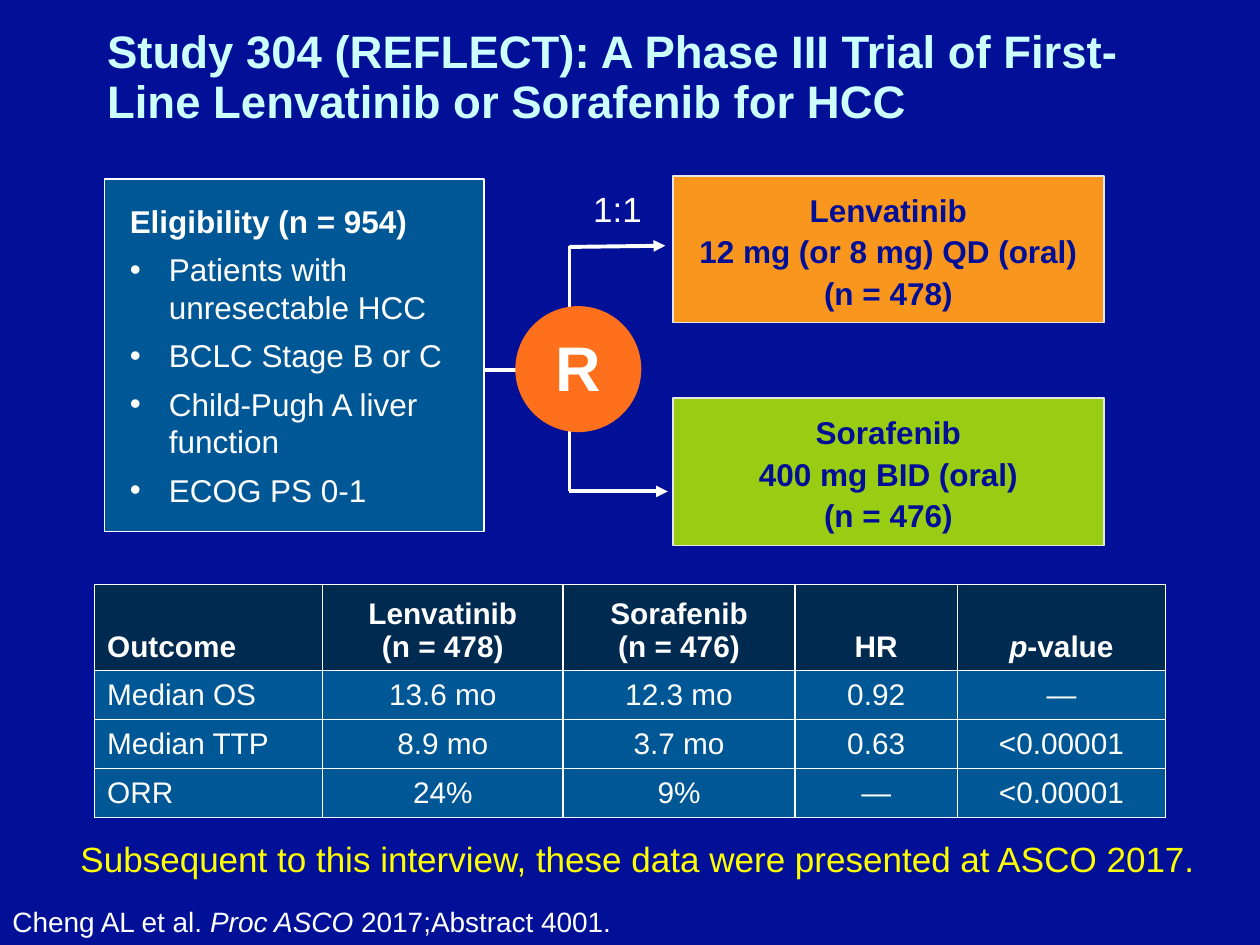
from typing import NamedTuple

from lxml.etree import SubElement
from pptx import Presentation
from pptx.dml.color import RGBColor
from pptx.enum.shapes import MSO_CONNECTOR, MSO_SHAPE
from pptx.enum.text import MSO_ANCHOR, MSO_AUTO_SIZE, PP_ALIGN
from pptx.oxml.ns import qn
from pptx.util import Inches, Pt

NAVY = RGBColor(0x01, 0x10, 0x97)
ARM_TEXT = RGBColor(0x01, 0x0F, 0x97)
WHITE = RGBColor(0xFF, 0xFF, 0xFF)
PALE = RGBColor(0xE6, 0xE6, 0xE6)
ICE = RGBColor(0xCC, 0xFF, 0xFF)
YELLOW = RGBColor(0xFF, 0xFF, 0x00)
AMBER = RGBColor(0xF9, 0x96, 0x1E)
GREEN = RGBColor(0x99, 0xCD, 0x13)
ORANGE = RGBColor(0xFE, 0x70, 0x1B)
BLUE = RGBColor(0x00, 0x57, 0x96)
DARK = RGBColor(0x01, 0x2A, 0x50)


class Box(NamedTuple):
    left: float
    top: float
    width: float
    height: float

    def lengths(self):
        return [Inches(v) for v in self]


class Arm(NamedTuple):
    box: Box
    fill: RGBColor
    lines: list


class Link(NamedTuple):
    x1: float
    y1: float
    x2: float
    y2: float
    arrow: bool = False


ARMS = [
    Arm(Box(5.34, 1.4, 3.42, 1.16), AMBER,
        ["Lenvatinib\n12 mg (or 8 mg) QD (oral)", "(n = 478)"]),
    Arm(Box(5.34, 3.16, 3.42, 1.17), GREEN,
        ["Sorafenib\n400 mg BID (oral)", "(n = 476)"]),
]
LINKS = [
    Link(4.52, 2.67, 4.52, 1.95),
    Link(4.52, 1.96, 5.28, 1.95, arrow=True),
    Link(4.52, 3.34, 4.52, 3.9),
    Link(4.52, 3.9, 5.3, 3.9, arrow=True),
    Link(3.84, 2.94, 4.19, 2.94),
]
CRITERIA = ["Patients with unresectable HCC", "BCLC Stage B or C",
            "Child-Pugh A liver function", "ECOG PS 0-1"]
COLUMNS = [1.81, 1.91, 1.84, 1.29, 1.65]
ROW_HEIGHTS = [0.68, 0.39, 0.39, 0.39]
OUTCOMES = [
    [["Outcome"], ["Lenvatinib", "(n = 478)"], ["Sorafenib", "(n = 476)"],
     ["HR"], ["*p*-value"]],
    [["Median OS"], ["13.6 mo"], ["12.3 mo"], ["0.92"], ["—"]],
    [["Median TTP"], ["8.9 mo"], ["3.7 mo"], ["0.63"], ["<0.00001"]],
    [["ORR"], ["24%"], ["9%"], ["—"], ["<0.00001"]],
]


def write(tf, lines: list, *, size: float, color=WHITE, bold=False,
          align=PP_ALIGN.LEFT, spacing=None, before=0) -> None:
    """Fill a text frame, a paragraph per line; *stars* mark italics."""
    for i, line in enumerate(lines):
        p = tf.add_paragraph() if i else tf.paragraphs[0]
        p.alignment = align
        p.space_before = Pt(before)
        if spacing:
            p.line_spacing = spacing
        for j, part in enumerate(line.split("\n")):
            if j:
                p.add_line_break()
            for k, text in enumerate(part.split("*")):
                if text:
                    r = p.add_run()
                    r.text = text
                    f = r.font
                    f.name, f.size, f.bold, f.italic = "Arial", Pt(size), bold, k % 2 == 1
                    f.color.rgb = color


def add_label(s, box: Box, text: str, *, wrap=False, **style) -> None:
    tf = s.shapes.add_textbox(*box.lengths()).text_frame
    tf.word_wrap = wrap
    tf.auto_size = MSO_AUTO_SIZE.SHAPE_TO_FIT_TEXT
    write(tf, [text], **style)


def add_panel(s, kind, box: Box, fill: RGBColor, line=None):
    """Add a flat shape and return its text frame."""
    sp = s.shapes.add_shape(kind, *box.lengths())
    sp.shadow.inherit = False
    sp.fill.solid()
    sp.fill.fore_color.rgb = fill
    if line is None:
        sp.line.fill.background()
    else:
        sp.line.color.rgb = line
        sp.line.width = Pt(1)
    tf = sp.text_frame
    tf.word_wrap = True
    tf.vertical_anchor = MSO_ANCHOR.MIDDLE
    return tf


def set_margins(tf, left: float, top: float, right: float, bottom: float) -> None:
    tf.margin_left, tf.margin_top = Inches(left), Inches(top)
    tf.margin_right, tf.margin_bottom = Inches(right), Inches(bottom)


def add_bullet(p) -> None:
    pPr = p._p.get_or_add_pPr()
    pPr.set("marL", str(Inches(0.31)))
    pPr.set("indent", str(-Inches(0.31)))
    SubElement(pPr, qn("a:buFont")).set("typeface", "Arial")
    SubElement(pPr, qn("a:buChar")).set("char", "•")


def add_link(s, link: Link) -> None:
    ends = [Inches(v) for v in link[:4]]
    c = s.shapes.add_connector(MSO_CONNECTOR.STRAIGHT, *ends)
    c.line.color.rgb = WHITE
    c.line.width = Pt(2.25)
    if link.arrow:
        SubElement(c.line._get_or_add_ln(), qn("a:tailEnd")).set("type", "triangle")
    SubElement(c._element.spPr, qn("a:effectLst"))


def add_borders(cell) -> None:
    tcPr = cell._tc.get_or_add_tcPr()
    for i, side in enumerate(("lnL", "lnR", "lnT", "lnB")):
        ln = tcPr.makeelement(qn(f"a:{side}"), {"w": str(Pt(1))})
        fill = SubElement(ln, qn("a:solidFill"))
        SubElement(fill, qn("a:srgbClr")).set("val", str(WHITE))
        tcPr.insert(i, ln)


def add_outcomes(s, box: Box) -> None:
    table = s.shapes.add_table(len(OUTCOMES), len(COLUMNS), *box.lengths()).table
    for col, width in zip(table.columns, COLUMNS):
        col.width = Inches(width)
    for i, (row, height) in enumerate(zip(OUTCOMES, ROW_HEIGHTS)):
        table.rows[i].height = Inches(height)
        for j, lines in enumerate(row):
            cell = table.cell(i, j)
            cell.fill.solid()
            cell.fill.fore_color.rgb = BLUE if i else DARK
            cell.vertical_anchor = MSO_ANCHOR.MIDDLE if i else MSO_ANCHOR.BOTTOM
            write(cell.text_frame, lines, size=17, bold=i == 0,
                  align=PP_ALIGN.CENTER if j else PP_ALIGN.LEFT)
            add_borders(cell)


def main() -> None:
    prs = Presentation()
    prs.slide_width, prs.slide_height = Inches(10), Inches(7.5)
    s = prs.slides.add_slide(prs.slide_layouts[5])
    s.background.fill.solid()
    s.background.fill.fore_color.rgb = NAVY

    # Title
    title = s.shapes.title
    title.left, title.top, title.width, title.height = Box(0.75, 0, 8.5, 1.25).lengths()
    tf = title.text_frame
    tf.auto_size = MSO_AUTO_SIZE.NONE
    tf.vertical_anchor = MSO_ANCHOR.MIDDLE
    write(tf, ["Study 304 (REFLECT): A Phase III Trial of First-Line "
               "Lenvatinib or Sorafenib for HCC"],
          size=26, color=ICE, bold=True, spacing=0.9)

    # Treatment arms
    for arm in ARMS:
        tf = add_panel(s, MSO_SHAPE.RECTANGLE, arm.box, arm.fill, PALE)
        write(tf, arm.lines, size=18, color=ARM_TEXT, bold=True,
              align=PP_ALIGN.CENTER, spacing=1.1)

    # Eligibility criteria
    tf = add_panel(s, MSO_SHAPE.RECTANGLE, Box(0.83, 1.42, 3.01, 2.8), BLUE, WHITE)
    set_margins(tf, 0.2, 0.2, 0.1, 0.2)
    write(tf, ["Eligibility (n = 954)", *CRITERIA], size=18, before=6)
    tf.paragraphs[0].runs[0].font.bold = True
    for p in tf.paragraphs[1:]:
        add_bullet(p)

    # Randomization
    for link in LINKS:
        add_link(s, link)
    tf = add_panel(s, MSO_SHAPE.OVAL, Box(4.09, 2.43, 1, 1), ORANGE)
    set_margins(tf, 0, 0, 0, 0.05)
    write(tf, ["R"], size=36, bold=True, align=PP_ALIGN.CENTER)
    add_label(s, Box(4.61, 1.44, 0.59, 0.44), "1:1", size=20)

    # Outcomes and notes
    add_outcomes(s, Box(0.75, 4.64, 8.5, 1.85))
    add_label(s, Box(0.54, 6.6, 9.11, 0.44),
              "Subsequent to this interview, these data were presented at ASCO 2017.",
              size=20, color=YELLOW)
    add_label(s, Box(0, 7.13, 9.78, 0.37),
              "Cheng AL et al. *Proc ASCO* 2017;Abstract 4001.", size=16, wrap=True)

    prs.save("out.pptx")


if __name__ == "__main__":
    main()
